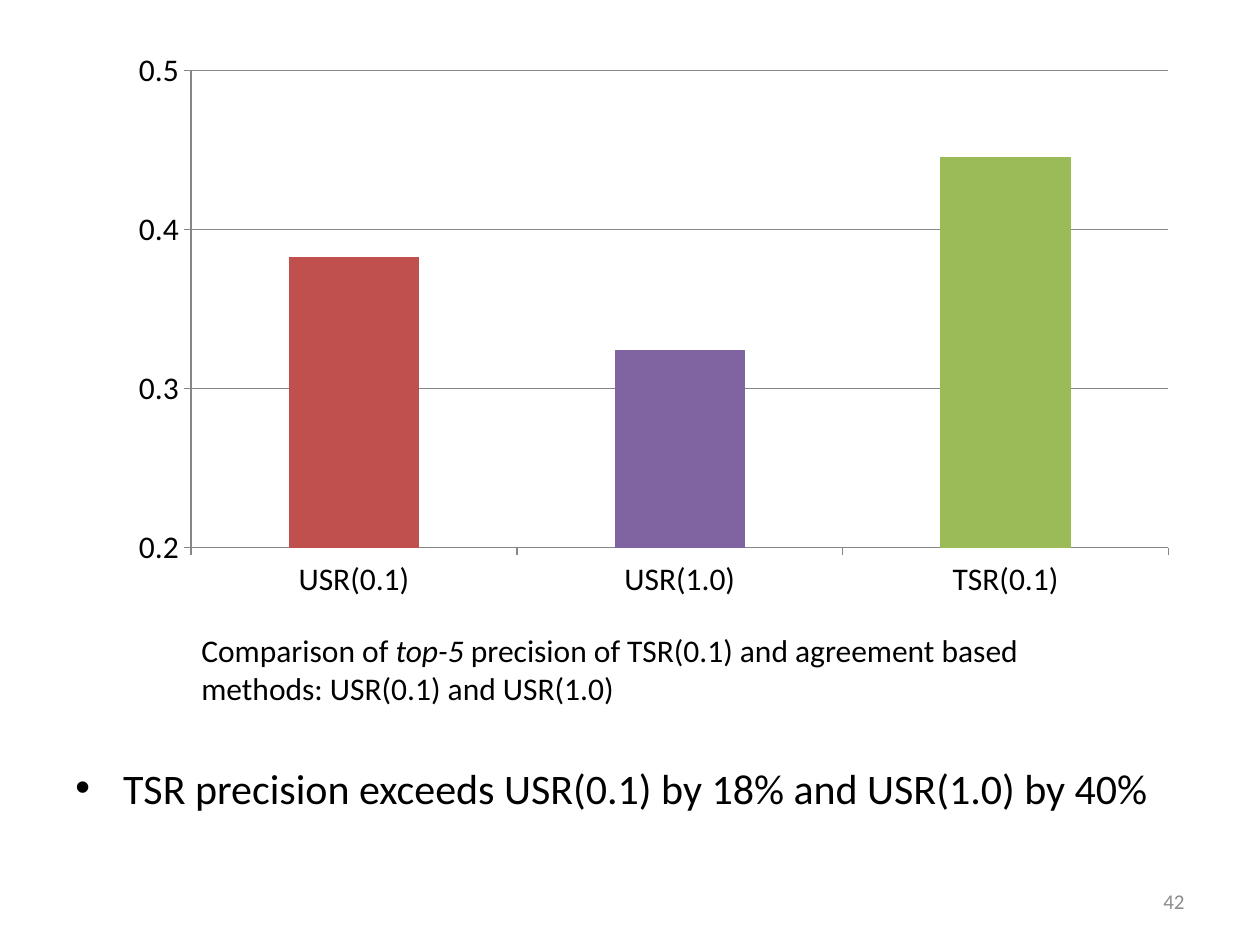
from lxml import etree
from pptx import Presentation
from pptx.chart.data import CategoryChartData
from pptx.dml.color import RGBColor
from pptx.enum.chart import XL_CHART_TYPE, XL_TICK_MARK
from pptx.enum.text import MSO_ANCHOR, PP_ALIGN
from pptx.oxml.ns import qn
from pptx.util import Inches, Pt

COLUMN = XL_CHART_TYPE.COLUMN_CLUSTERED
OUTSIDE = XL_TICK_MARK.OUTSIDE
TOP, MIDDLE = MSO_ANCHOR.TOP, MSO_ANCHOR.MIDDLE
LEFT, RIGHT = PP_ALIGN.LEFT, PP_ALIGN.RIGHT
FONT = "Calibri"
BLACK, GREY, LINE = "000000", "8C8C8C", "868686"

# Content: method, top-5 precision, bar colour
BARS = [
    ("USR(0.1)", 0.383, "C0504D"),
    ("USR(1.0)", 0.324, "8064A2"),
    ("TSR(0.1)", 0.446, "9BBB59"),
]
CAPTION = [
    ("Comparison of ", False),
    ("top-5 ", True),
    ("precision of TSR(0.1) and agreement based methods: USR(0.1) and USR(1.0)", False),
]
FINDING = [("TSR precision exceeds USR(0.1) by 18% and USR(1.0) by 40%", False)]
PAGE = [("42", False)]

# Left, top, width, height in inches
CHART_BOX = (0.83, 0.33, 8.59, 4.53)
CAPTION_BOX = (1.5, 4.96, 7.33, 0.71)
FINDING_BOX = (0.5, 6, 9, 1.33)
PAGE_BOX = (7.17, 6.95, 2.33, 0.4)
# Plot area as shares of the chart
PLOT = {"x": 0.08, "y": 0.051, "w": 0.903, "h": 0.836}


def rgb(color):
    return RGBColor.from_string(color)


def add_text(slide, box, runs, size, color=BLACK, align=LEFT, anchor=TOP, bullet_indent=None):
    tf = slide.shapes.add_textbox(*map(Inches, box)).text_frame
    tf.word_wrap = True
    tf.vertical_anchor = anchor
    p = tf.paragraphs[0]
    p.alignment = align
    for text, italic in runs:
        r = p.add_run()
        r.text = text
        r.font.name, r.font.size, r.font.italic = FONT, Pt(size), italic
        r.font.color.rgb = rgb(color)
    if bullet_indent:
        p.space_before = Pt(size * 0.2)
        pPr = p._p.get_or_add_pPr()
        pPr.set("marL", str(Inches(bullet_indent)))
        pPr.set("indent", str(-Inches(bullet_indent)))
        etree.SubElement(pPr, qn("a:buFont")).set("typeface", "Arial")
        etree.SubElement(pPr, qn("a:buChar")).set("char", "•")


def set_plot_layout(chart, shares):
    area = chart._chartSpace.chart.plotArea
    for old in area.findall(qn("c:layout")):
        area.remove(old)
    layout = etree.Element(qn("c:layout"))
    area.insert(0, layout)
    manual = etree.SubElement(layout, qn("c:manualLayout"))
    settings = {"layoutTarget": "inner", "xMode": "edge", "yMode": "edge", **shares}
    for name, value in settings.items():
        etree.SubElement(manual, qn(f"c:{name}")).set("val", str(value))


def add_precision_chart(slide):
    data = CategoryChartData()
    data.categories = [name for name, _, _ in BARS]
    data.add_series("Series 1", [value for _, value, _ in BARS])
    chart = slide.shapes.add_chart(COLUMN, *map(Inches, CHART_BOX), data).chart
    chart.has_legend = chart.has_title = False
    chart.font.name, chart.font.size = FONT, Pt(18)
    chart.font.color.rgb = rgb(BLACK)
    set_plot_layout(chart, PLOT)

    # Bars
    plot = chart.plots[0]
    plot.gap_width, plot.vary_by_categories = 150, False
    series = plot.series[0]
    series.format.fill.solid()
    series.format.fill.fore_color.rgb = rgb("4F81BD")
    for i, (_, _, color) in enumerate(BARS):
        fill = series.points[i].format.fill
        fill.solid()
        fill.fore_color.rgb = rgb(color)

    # Axes
    val = chart.value_axis
    val.minimum_scale, val.maximum_scale, val.major_unit = 0.2, 0.5, 0.1
    val.has_major_gridlines = True
    val.tick_labels.number_format = "0.0"
    val.tick_labels.number_format_is_linked = False
    for axis in (chart.category_axis, val):
        axis.major_tick_mark = OUTSIDE
    for part in (chart.category_axis, val, val.major_gridlines):
        part.format.line.color.rgb = rgb(LINE)
        part.format.line.width = Pt(0.75)


def main():
    prs = Presentation()
    prs.slide_width, prs.slide_height = Inches(10), Inches(7.5)
    s = prs.slides.add_slide(prs.slide_layouts[6])
    add_text(s, PAGE_BOX, PAGE, 12, color=GREY, align=RIGHT, anchor=MIDDLE)
    add_text(s, CAPTION_BOX, CAPTION, 18)
    add_text(s, FINDING_BOX, FINDING, 24, bullet_indent=0.38)
    add_precision_chart(s)
    prs.save("out.pptx")


if __name__ == "__main__":
    main()
